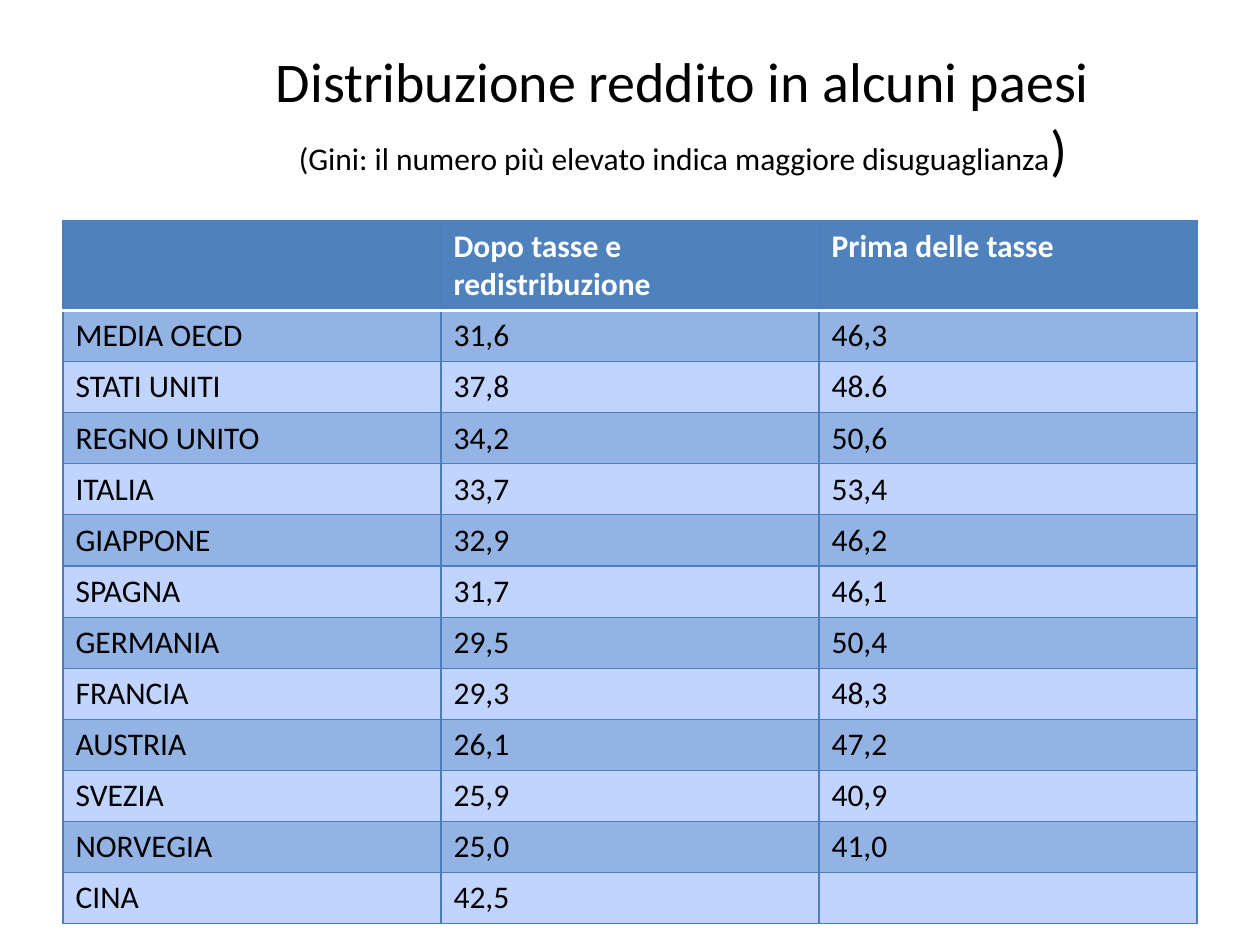
from lxml.etree import SubElement as Sub
from pptx import Presentation as Deck
from pptx.dml.color import RGBColor as RGB
from pptx.enum.text import MSO_ANCHOR as Anchor, PP_ALIGN as Align
from pptx.oxml.ns import qn
from pptx.util import Cm, Pt

BLACK = RGB(0x00, 0x00, 0x00)
WHITE = RGB(0xFF, 0xFF, 0xFF)
HEAD = RGB(0x4F, 0x81, 0xBD)
LINE = RGB(0x4B, 0x7E, 0xBC)
DARK = RGB(0x93, 0xB3, 0xE5)
LIGHT = RGB(0xC0, 0xD4, 0xFF)

ROWS = [
    ("", "Dopo tasse e redistribuzione", "Prima delle tasse"),
    ("MEDIA OECD", "31,6", "46,3"),
    ("STATI UNITI", "37,8", "48.6"),
    ("REGNO UNITO", "34,2", "50,6"),
    ("ITALIA", "33,7", "53,4"),
    ("GIAPPONE", "32,9", "46,2"),
    ("SPAGNA", "31,7", "46,1"),
    ("GERMANIA", "29,5", "50,4"),
    ("FRANCIA", "29,3", "48,3"),
    ("AUSTRIA", "26,1", "47,2"),
    ("SVEZIA", "25,9", "40,9"),
    ("NORVEGIA", "25,0", "41,0"),
    ("CINA", "42,5", ""),
]


def apply(item, form):
    for key, val in form.items():
        setattr(item, key, val)


def add_run(para, text, size, color=BLACK, bold=False):
    run = para.add_run()
    run.text = text
    apply(run.font, {"name": "Calibri", "size": Pt(size), "bold": bold})
    run.font.color.rgb = color


def add_title(slide):
    title = slide.shapes.title
    apply(title, {"left": Cm(2.34), "top": Cm(0.71),
                  "width": Cm(22.86), "height": Cm(3.18)})
    frame = title.text_frame
    apply(frame, {"word_wrap": True, "vertical_anchor": Anchor.MIDDLE})
    para = frame.paragraphs[0]
    para.alignment = Align.CENTER
    add_run(para, "Distribuzione reddito in alcuni paesi", 32)
    para.add_line_break()
    add_run(para, "(Gini: il numero più elevato indica maggiore disuguaglianza", 18)
    add_run(para, ")", 32)


def add_edge(cell, side, color, width):
    props = cell._tc.get_or_add_tcPr()
    edge = Sub(props, qn(f"a:ln{side}"), w=str(Pt(width)))
    fill = Sub(edge, qn("a:solidFill"))
    Sub(fill, qn("a:srgbClr"), val=str(color))


def format_cell(cell, text, row):
    # The rule under the header is white and thicker
    rule = {0: "B", 1: "T"}.get(row)
    for side in "LRTB":
        color, width = (WHITE, 2) if side == rule else (LINE, 0.75)
        add_edge(cell, side, color, width)
    # Header fill, then alternating bands
    cell.fill.solid()
    cell.fill.fore_color.rgb = HEAD if row == 0 else DARK if row % 2 else LIGHT
    para = cell.text_frame.paragraphs[0]
    para.font.size = Pt(18)
    if text:
        add_run(para, text, 18, BLACK if row else WHITE, row == 0)


def add_grid(slide):
    high, low, wide = Cm(1.81), Cm(1.03), Cm(7.62)
    count, cols = len(ROWS), len(ROWS[0])
    table = slide.shapes.add_table(
        count, cols, Cm(1.27), Cm(4.45),
        wide * cols, high + low * (count - 1)).table
    table.horz_banding = False
    for col in table.columns:
        col.width = wide
    for row, texts in enumerate(ROWS):
        table.rows[row].height = low if row else high
        for col, text in enumerate(texts):
            format_cell(table.cell(row, col), text, row)


def main():
    deck = Deck()
    apply(deck, {"slide_width": Cm(25.4), "slide_height": Cm(19.05)})
    slide = deck.slides.add_slide(deck.slide_layouts[5])
    add_title(slide)
    add_grid(slide)
    deck.save("out.pptx")


if __name__ == "__main__":
    main()
